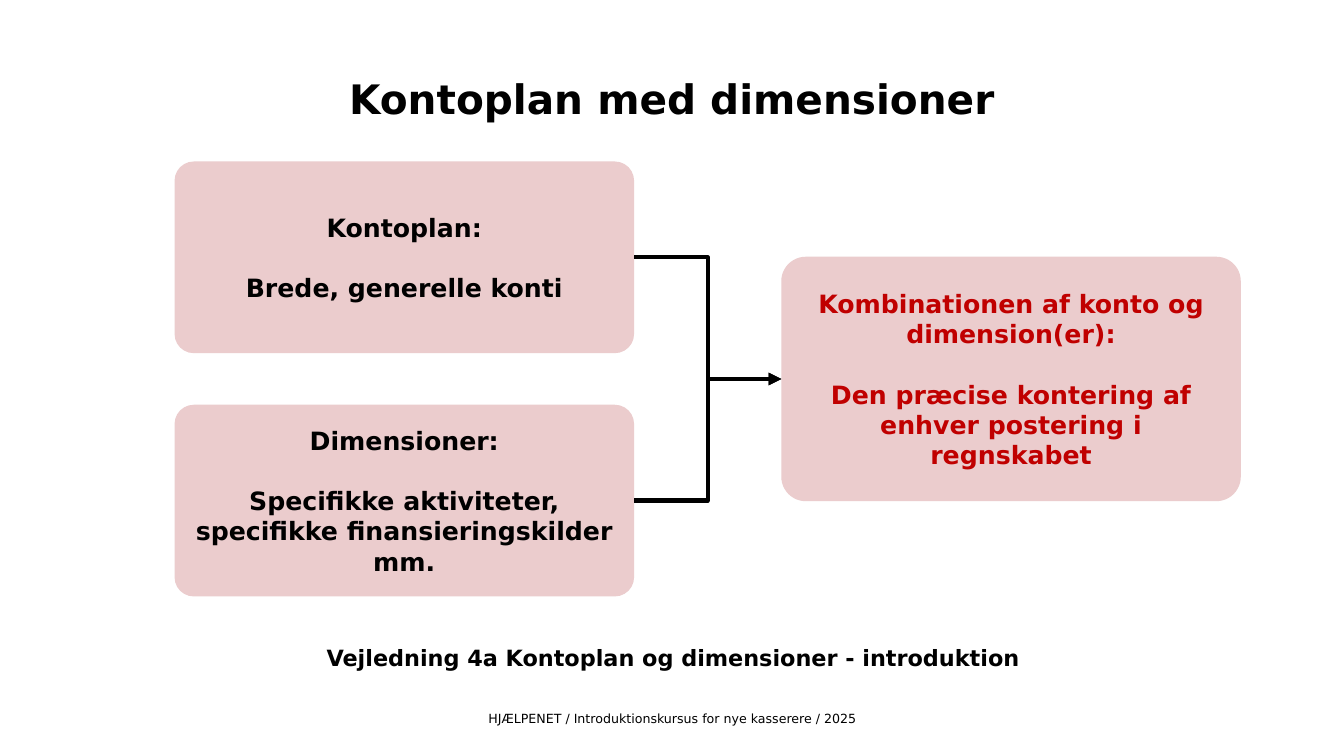
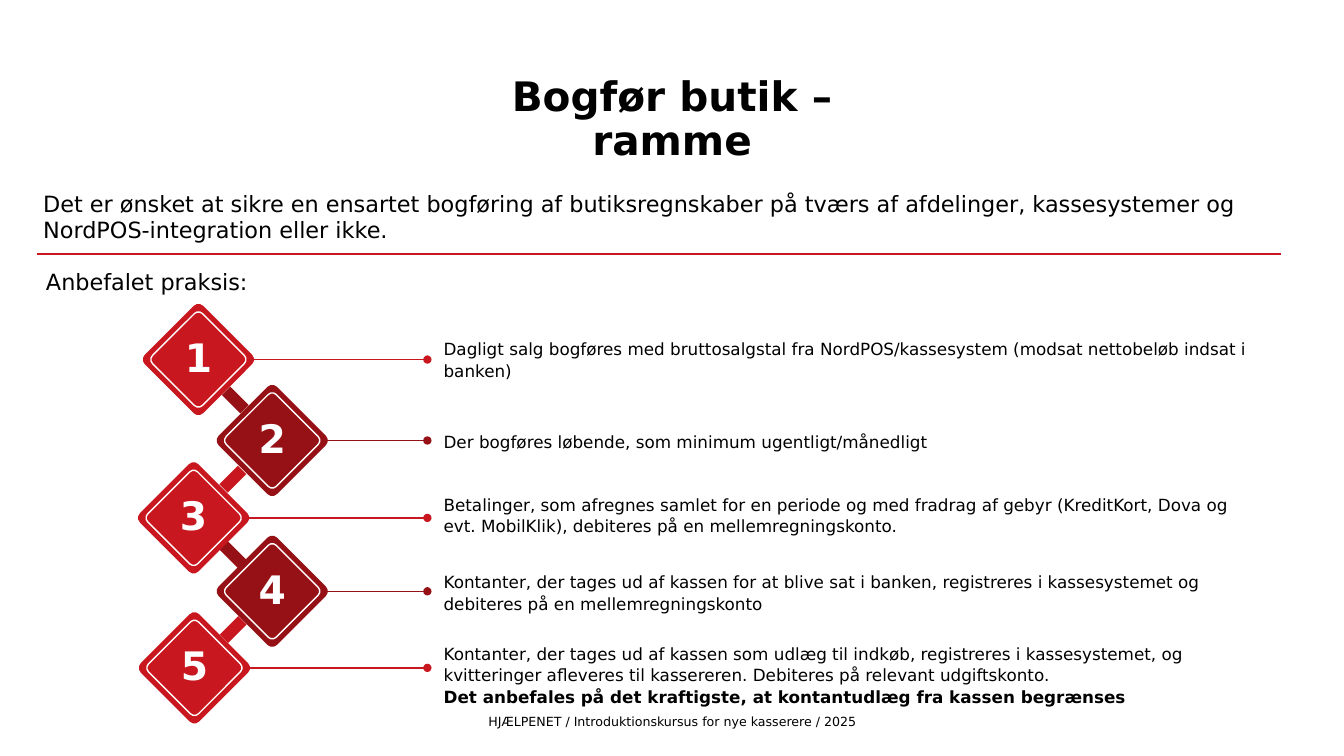
import pptx
import pptx.util
import pptx.dml.color
import pptx.enum.shapes
import pptx.enum.text
import pptx.oxml.ns
import lxml.etree

Cm, Pt = pptx.util.Cm, pptx.util.Pt
SHAPE = pptx.enum.shapes.MSO_SHAPE
CONNECTOR = pptx.enum.shapes.MSO_CONNECTOR
ALIGN = pptx.enum.text.PP_ALIGN
ANCHOR = pptx.enum.text.MSO_ANCHOR
qn = pptx.oxml.ns.qn

FONT = "DejaVu Sans"
BLACK, WHITE = "000000", "FFFFFF"
RED, DARK_RED, PINK, TEXT_RED = "C8171E", "961116", "EBCCCD", "C00000"
INSET = (0.25, 0.13)
WIDTH, HEIGHT = 33.87, 19.05
FOOTER = "HJÆLPENET / Introduktionskursus for nye kasserere / 2025"

ACCOUNTS = {
    "title": "Kontoplan med dimensioner",
    "sources": [
        ("Kontoplan:", "Brede, generelle konti"),
        ("Dimensioner:", "Specifikke aktiviteter, specifikke finansieringskilder mm."),
    ],
    "result": ("Kombinationen af konto og dimension(er):",
               "Den præcise kontering af enhver postering i regnskabet"),
    "caption": "Vejledning 4a Kontoplan og dimensioner - introduktion",
}

SHOP = {
    "title": "Bogfør butik –\vramme",
    "intro": "Det er ønsket at sikre en ensartet bogføring af butiksregnskaber på tværs af "
             "afdelinger, kassesystemer og NordPOS-integration eller ikke.",
    "heading": "Anbefalet praksis:",
    "steps": [
        (5.0, 9.06, 8.51, "Dagligt salg bogføres med bruttosalgstal fra NordPOS/kassesystem "
                          "(modsat nettobeløb indsat i banken)", None),
        (6.86, 11.1, 10.85, "Der bogføres løbende, som minimum ugentligt/månedligt", None),
        (4.88, 13.05, 12.42, "Betalinger, som afregnes samlet for en periode og med fradrag af "
                             "gebyr (KreditKort, Dova og evt. MobilKlik), debiteres på en "
                             "mellemregningskonto.", None),
        (6.86, 14.9, 14.38, "Kontanter, der tages ud af kassen for at blive sat i banken, "
                            "registreres i kassesystemet og debiteres på en "
                            "mellemregningskonto", None),
        (4.9, 16.83, 16.18, "Kontanter, der tages ud af kassen som udlæg til indkøb, registreres "
                            "i kassesystemet, og kvitteringer afleveres til kassereren. "
                            "Debiteres på relevant udgiftskonto.",
         "Det anbefales på det kraftigste, at kontantudlæg fra kassen begrænses"),
    ],
}


def rgb(value):
    return pptx.dml.color.RGBColor.from_string(value)


def write(tf, text, size=12, color=BLACK, bold=False, align=ALIGN.LEFT, spacing=None, before=0):
    p = tf.paragraphs[0] if not tf.text else tf.add_paragraph()
    p.text = text
    p.alignment = align
    p.line_spacing = spacing
    if before:
        p.space_before = Pt(before)
    for r in p.runs:
        r.font.name = FONT
        r.font.size = Pt(size)
        r.font.bold = bold
        r.font.color.rgb = rgb(color)


def add_text(s, box, text, inset=(0, 0), anchor=ANCHOR.TOP, **fmt):
    tf = s.shapes.add_textbox(*map(Cm, box)).text_frame
    tf.word_wrap = True
    tf.vertical_anchor = anchor
    tf.margin_left = tf.margin_right = Cm(inset[0])
    tf.margin_top = tf.margin_bottom = Cm(inset[1])
    write(tf, text, **fmt)
    return tf


def add_shape(s, kind, box, fill=None, line=None, corner=None, rotation=0):
    sp = s.shapes.add_shape(kind, *map(Cm, box))
    sp.shadow.inherit = False
    sp.rotation = rotation
    if corner is not None:
        sp.adjustments[0] = corner
    if fill:
        sp.fill.solid()
        sp.fill.fore_color.rgb = rgb(fill)
    else:
        sp.fill.background()
    if line:
        sp.line.color.rgb = rgb(line)
        sp.line.width = Pt(1)
    else:
        sp.line.fill.background()
    return sp


def centred(x, y, width, height):
    return x - width / 2, y - height / 2, width, height


def add_line(s, ends, color, width, head=None, kind=CONNECTOR.STRAIGHT):
    c = s.shapes.add_connector(kind, *map(Cm, ends))
    c.line.color.rgb = rgb(color)
    c.line.width = Pt(width)
    props = c._element.spPr
    if head:
        lxml.etree.SubElement(props.find(qn("a:ln")), qn("a:tailEnd"), type=head)
    lxml.etree.SubElement(props, qn("a:effectLst"))
    return c


def add_slide(prs, title, title_top, footer_top):
    s = prs.slides.add_slide(prs.slide_layouts[6])
    add_text(s, (2.34, title_top, 29.2, 2.7), title, size=29, bold=True,
             align=ALIGN.CENTER, spacing=0.9)
    add_text(s, (2.34, footer_top, 29.2, 0.66), FOOTER, size=9,
             align=ALIGN.CENTER, anchor=ANCHOR.MIDDLE)
    return s


def add_card(s, box, texts, color):
    sp = add_shape(s, SHAPE.ROUNDED_RECTANGLE, box, fill=PINK, corner=0.1)
    tf = sp.text_frame
    tf.word_wrap = True
    tf.vertical_anchor = ANCHOR.MIDDLE
    for i, text in enumerate(texts):
        write(tf, text, size=18, color=color, bold=True, align=ALIGN.CENTER, before=21.5 * i)
    return sp


def accounts_slide(prs):
    s = add_slide(prs, ACCOUNTS["title"], 2.01, 17.78)
    left, top, width, height, pitch = 4.4, 4.07, 11.58, 4.83, 6.13
    sources = [add_card(s, (left, top + i * pitch, width, height), texts, BLACK)
               for i, texts in enumerate(ACCOUNTS["sources"])]
    middle = top + (pitch + height) / 2
    result = add_card(s, (19.69, middle - 3.08, width, 6.16), ACCOUNTS["result"], TEXT_RED)
    for source in sources:
        c = add_line(s, (0, 0, 1, 1), BLACK, 3, "triangle", CONNECTOR.ELBOW)
        c.begin_connect(source, 3)
        c.end_connect(result, 1)
    add_text(s, (7.44, 16.1, 19.05, 0.94), ACCOUNTS["caption"], inset=INSET,
             size=16, bold=True, align=ALIGN.CENTER)


def shop_slide(prs):
    s = add_slide(prs, SHOP["title"], 1.93, 17.84)
    add_text(s, (0.84, 4.65, 31.5, 1.63), SHOP["intro"], inset=INSET, size=16)
    add_line(s, (0.94, 6.4, 32.28, 6.4), RED, 1.5)
    add_text(s, (0.91, 6.63, 9.07, 0.94), SHOP["heading"], inset=INSET, size=16)

    steps = SHOP["steps"]
    colors = [(RED, DARK_RED)[i % 2] for i in range(len(steps))]
    for (x, y, *_), color in zip(steps, colors):
        add_line(s, (x + 1.3, y, 10.77, y), color, 1, "oval")
    for (x, y, *_), (next_x, next_y, *_), color in zip(steps, steps[1:], colors[1:]):
        add_shape(s, SHAPE.RECTANGLE, centred((x + next_x) / 2, (y + next_y) / 2, 0.3, 0.66),
                  fill=color, rotation=315 if next_x > x else 45)
    for i, ((x, y, top, text, advice), color) in enumerate(zip(steps, colors), 1):
        add_shape(s, SHAPE.ROUNDED_RECTANGLE, centred(x, y, 2.08, 2.08),
                  fill=color, corner=0.08, rotation=45)
        add_shape(s, SHAPE.ROUNDED_RECTANGLE, centred(x, y, 1.78, 1.78),
                  line=WHITE, corner=0.08, rotation=45)
        add_text(s, centred(x, y - 0.07, 0.76, 1.2), str(i), size=28, color=WHITE,
                 bold=True, align=ALIGN.CENTER, anchor=ANCHOR.MIDDLE)
        tf = add_text(s, (11.18, top, 20.37, 1.04), text, spacing=1.07)
        if advice:
            write(tf, advice, bold=True, spacing=1.07)


def main():
    prs = pptx.Presentation()
    prs.slide_width, prs.slide_height = Cm(WIDTH), Cm(HEIGHT)
    accounts_slide(prs)
    shop_slide(prs)
    prs.save("out.pptx")


if __name__ == "__main__":
    main()
